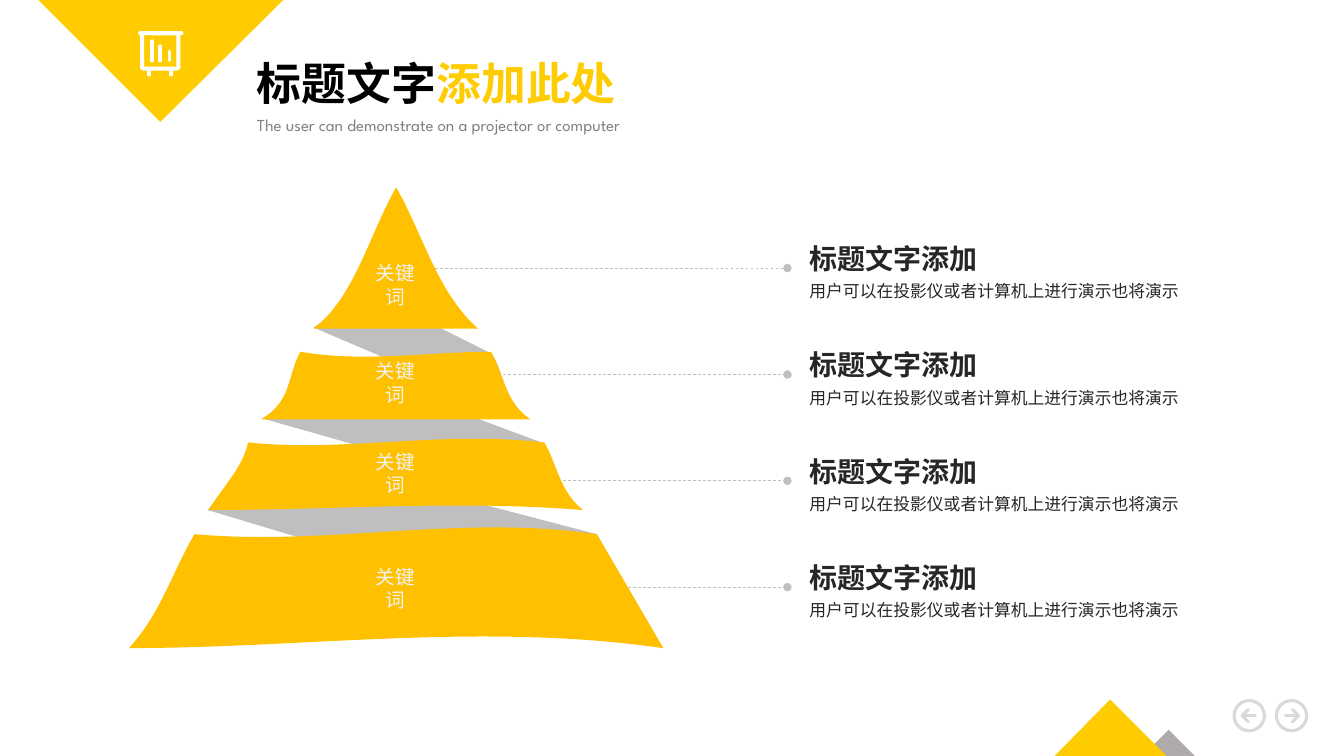
import pptx
import pptx.util
import pptx.dml.color
import pptx.enum.dml
import pptx.enum.shapes
import pptx.enum.text
import pptx.oxml
import pptx.oxml.ns
import dataclasses

SHAPE = pptx.enum.shapes.MSO_SHAPE
ALIGN = pptx.enum.text.PP_ALIGN
ANCHOR = pptx.enum.text.MSO_ANCHOR
FIT = pptx.enum.text.MSO_AUTO_SIZE


@dataclasses.dataclass(frozen=True)
class Theme:
    yellow: str = "FFCC01"
    amber: str = "FFC000"
    fold: str = "BFBFBF"
    corner: str = "AFABAB"
    nav: str = "D9D9D9"
    white: str = "FFFFFF"
    black: str = "000000"
    keyword: str = "F2F2F2"
    dark: str = "262626"
    subtitle: str = "808080"
    chinese: str = "Noto Sans CJK SC"
    latin: str = "League Spartan"
    body: str = "Arial"
    title_size: int = 32
    heading_size: int = 20
    keyword_size: int = 14
    small_size: int = 12


THEME = Theme()
WIDTH, HEIGHT = 13.33, 7.5

TITLE = [("标题文字", THEME.black), ("添加此处", THEME.yellow)]
SUBTITLE = "The user can demonstrate on a projector or computer"
HEADING = "标题文字添加"
DETAIL = "用户可以在投影仪或者计算机上进行演示也将演示"
KEYWORD = "关键词"

KEYWORD_TOPS = [2.66, 3.63, 4.53, 5.67]
LEADER_STARTS = [4.17, 4.74, 5.34, 5.34]
LEADER_END, TEXT_LEFT = 7.81, 7.93
FIRST_ROW, ROW_STEP = 2.66, 1.055

# Each outline: colour, start, then line ends (2 numbers) or Bezier curves (6 numbers).
PYRAMID = [
    (THEME.fold, (5.22, 4.15), [(3.11, 3.25), (3.3, 3.13, 3.4, 3.01, 3.48, 2.81),
                                (4.88, 3.51), (5.01, 3.72, 4.99, 3.95, 5.22, 4.15)]),
    (THEME.amber, (3.93, 1.86), [(4.2, 2.33, 4.33, 2.89, 4.74, 3.26), (3.11, 3.26),
                                 (3.52, 2.95, 3.66, 2.33, 3.93, 1.86)]),
    (THEME.fold, (5.77, 5.05), [(2.6, 4.15), (2.9, 4, 2.85, 3.72, 2.98, 3.5),
                                (5.4, 4.4), (5.52, 4.62, 5.55, 4.89, 5.77, 5.05)]),
    (THEME.amber, (2.98, 3.49), [(3.62, 3.6, 4.24, 3.49, 4.87, 3.49),
                                 (5, 3.72, 5.01, 3.99, 5.26, 4.16), (2.59, 4.16),
                                 (2.9, 3.98, 2.85, 3.72, 2.98, 3.49)]),
    (THEME.fold, (6.56, 6.41), [(2.06, 5.06), (2.23, 4.84, 2.45, 4.68, 2.48, 4.4),
                                (5.92, 5.3)]),
    (THEME.amber, (2.46, 4.39), [(3.42, 4.49, 4.36, 4.27, 5.4, 4.39),
                                 (5.53, 4.62, 5.55, 4.87, 5.78, 5.06),
                                 (4.56, 4.96, 3.31, 5.06, 2.07, 5.06),
                                 (2.2, 4.84, 2.41, 4.64, 2.46, 4.39)]),
    (THEME.amber, (1.93, 5.3), [(3.26, 5.42, 4.56, 5.1, 5.92, 5.3), (6.58, 6.43),
                                (4.78, 6.17, 3.04, 6.43, 1.28, 6.43),
                                (1.6, 6.08, 1.71, 5.67, 1.93, 5.3)]),
]
CORNERS = [
    (THEME.corner, (11.59, 7.24), [(11.85, HEIGHT), (11.33, HEIGHT)]),
    (THEME.yellow, (0.38, 0), [(2.81, 0), (1.59, 1.21)]),
    (THEME.yellow, (11.01, 6.94), [(11.57, HEIGHT), (10.46, HEIGHT)]),
]

# Board icon strokes: x1, y1, x2, y2, and width in points.
BOARD_STROKES = [
    (1.39, 0.33, 1.80, 0.33, 2.9),
    (1.51, 0.41, 1.51, 0.60, 2.9),
    (1.59, 0.46, 1.59, 0.60, 2.9),
    (1.68, 0.51, 1.68, 0.60, 2.5),
    (1.48, 0.70, 1.48, 0.74, 2.9),
    (1.70, 0.70, 1.70, 0.74, 2.9),
]
NAV_BUTTONS = [(12.81, 1), (12.39, -1)]  # centre x, arrow direction
NAV_CENTRE, NAV_RADIUS, NAV_STROKE = 7.1, 0.15, 2.2


def inches(*lengths):
    return [pptx.util.Inches(length) for length in lengths]


def rgb(colour):
    return pptx.dml.color.RGBColor.from_string(colour)


def bezier(start, curve, steps=24):
    """Points along a cubic curve, without its start."""
    controls = [start, curve[:2], curve[2:4], curve[4:]]
    points = []
    for step in range(1, steps + 1):
        t = step / steps
        weights = [(1 - t) ** 3, 3 * t * (1 - t) ** 2, 3 * t * t * (1 - t), t ** 3]
        points.append(tuple(sum(w * c[axis] for w, c in zip(weights, controls))
                            for axis in (0, 1)))
    return points


def add_outline(page, colour, start, segments):
    points = [start]
    for segment in segments:
        points += [segment] if len(segment) == 2 else bezier(points[-1], segment)
    builder = page.shapes.build_freeform(*inches(*start))
    builder.add_line_segments([inches(*point) for point in points[1:]], close=True)
    shape = builder.convert_to_shape()
    shape.shadow.inherit = False
    shape.fill.solid()
    shape.fill.fore_color.rgb = rgb(colour)
    shape.line.fill.background()


def add_ring(page, preset, left, top, width, height, colour, weight):
    """An unfilled preset shape with a stroke."""
    shape = page.shapes.add_shape(preset, *inches(left, top, width, height))
    shape.shadow.inherit = False
    shape.fill.background()
    shape.line.color.rgb = rgb(colour)
    shape.line.width = pptx.util.Pt(weight)
    return shape


def add_stroke(page, x1, y1, x2, y2, weight, colour, leader=False):
    """A round-capped line, or a dashed leader ending in a dot."""
    stroke = page.shapes.add_connector(pptx.enum.shapes.MSO_CONNECTOR.STRAIGHT,
                                       *inches(x1, y1, x2, y2))
    stroke.line.color.rgb = rgb(colour)
    stroke.line.width = pptx.util.Pt(weight)
    properties = stroke._element.spPr
    outline = properties.find(pptx.oxml.ns.qn("a:ln"))
    if leader:
        stroke.line.dash_style = pptx.enum.dml.MSO_LINE.DASH
        outline.append(pptx.oxml.parse_xml(
            f'<a:tailEnd {pptx.oxml.ns.nsdecls("a")} type="oval"/>'))
    else:
        outline.set("cap", "rnd")
    properties.append(pptx.oxml.parse_xml(
        f'<a:effectLst {pptx.oxml.ns.nsdecls("a")}/>'))


def add_text(page, place, spans, font, size, bold=False, spacing=None,
             align=None, **frame_format):
    """A one-paragraph text box; spans are (text, colour) pairs."""
    frame = page.shapes.add_textbox(*inches(*place)).text_frame
    for name, value in {"word_wrap": True, **frame_format}.items():
        setattr(frame, name, value)
    para = frame.paragraphs[0]
    for name, value in {"line_spacing": spacing, "alignment": align}.items():
        setattr(para, name, value)
    for text, colour in spans:
        span = para.add_run()
        span.text = text
        for name, value in {"name": font, "size": pptx.util.Pt(size),
                            "bold": bold}.items():
            setattr(span.font, name, value)
        span.font.color.rgb = rgb(colour)
        span._r.get_or_add_rPr().append(pptx.oxml.parse_xml(
            f'<a:ea {pptx.oxml.ns.nsdecls("a")} typeface="{font}"/>'))


def main():
    deck = pptx.Presentation()
    deck.slide_width, deck.slide_height = inches(WIDTH, HEIGHT)
    page = deck.slides.add_slide(deck.slide_layouts[6])
    rows = [FIRST_ROW + ROW_STEP * index for index in range(len(LEADER_STARTS))]

    for start, y in zip(LEADER_STARTS, rows):
        add_stroke(page, start, y, LEADER_END, y, 0.5, THEME.fold, leader=True)
    for outline in PYRAMID + CORNERS:
        add_outline(page, *outline)
    for top in KEYWORD_TOPS:
        add_text(page, (3.54, top, 0.76, 0.33), [(KEYWORD, THEME.keyword)],
                 THEME.chinese, THEME.keyword_size, align=ALIGN.CENTER,
                 word_wrap=False, vertical_anchor=ANCHOR.MIDDLE)
    for y in rows:
        add_text(page, (TEXT_LEFT, y + 0.03, 3.96, 0.33), [(DETAIL, THEME.dark)],
                 THEME.body, THEME.small_size, spacing=1.25,
                 auto_size=FIT.SHAPE_TO_FIT_TEXT)
        add_text(page, (TEXT_LEFT, y - 0.38, 2.66, 0.47), [(HEADING, THEME.dark)],
                 THEME.body, THEME.heading_size, bold=True, spacing=1.2,
                 auto_size=FIT.SHAPE_TO_FIT_TEXT)

    add_text(page, (2.45, 0.5, 3.79, 0.64), TITLE, THEME.chinese, THEME.title_size,
             bold=True, word_wrap=False, auto_size=FIT.SHAPE_TO_FIT_TEXT)
    add_text(page, (2.45, 1.06, 7.24, 0.33), [(SUBTITLE, THEME.subtitle)], THEME.latin,
             THEME.small_size, spacing=1.14, auto_size=FIT.SHAPE_TO_FIT_TEXT)

    board = add_ring(page, SHAPE.ROUNDED_RECTANGLE, 1.41, 0.33, 0.36, 0.35,
                     THEME.white, 2.9)
    board.adjustments[0] = 0.04
    for stroke in BOARD_STROKES:
        add_stroke(page, *stroke, THEME.white)
    for x, side in NAV_BUTTONS:
        add_ring(page, SHAPE.OVAL, x - NAV_RADIUS, NAV_CENTRE - NAV_RADIUS,
                 2 * NAV_RADIUS, 2 * NAV_RADIUS, THEME.nav, NAV_STROKE)
        tip = x + 0.07 * side
        for back, rise in [(0.13, 0), (0.06, -0.06), (0.06, 0.06)]:
            add_stroke(page, tip - back * side, NAV_CENTRE + rise, tip, NAV_CENTRE,
                       NAV_STROKE, THEME.nav)
    deck.save("out.pptx")


if __name__ == "__main__":
    main()
